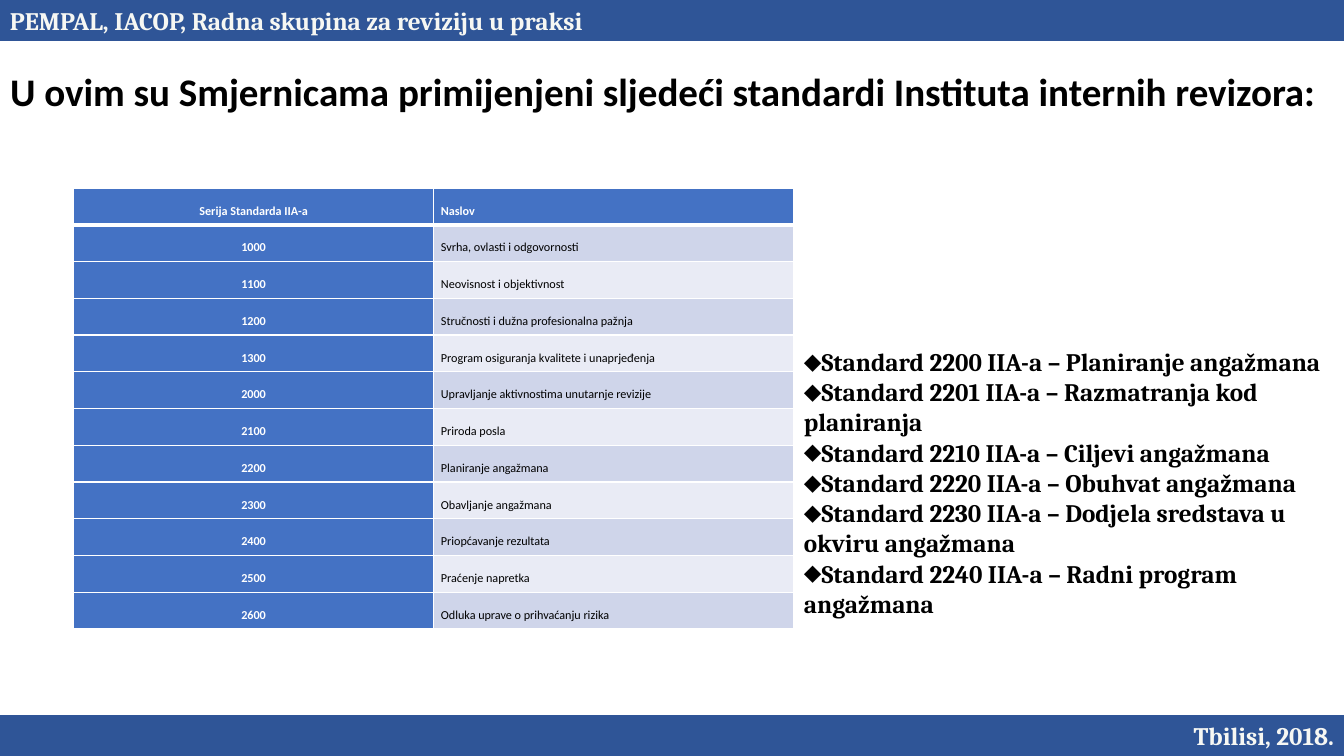
"""Builds the slide listing the IIA standards applied in the guidelines."""
from typing import NamedTuple

from lxml import etree
from pptx import Presentation
from pptx import util as u
from pptx.dml.color import RGBColor
from pptx.enum import shapes, text
from pptx.oxml import ns

EMU_PER_PX = 9525
WIDTH, HEIGHT, BAR_HEIGHT = 1280, 720, 39
ROW_HEIGHT, COLUMN_WIDTH = 35, 343

NAVY = RGBColor(0x2F, 0x55, 0x97)
BLUE = RGBColor(0x44, 0x72, 0xC4)
BAND_DARK = RGBColor(0xCF, 0xD5, 0xEA)
BAND_LIGHT = RGBColor(0xE9, 0xEB, 0xF5)
IVORY = RGBColor(0xF6, 0xF7, 0xF3)
WHITE = RGBColor(0xFF, 0xFF, 0xFF)
BLACK = RGBColor(0x00, 0x00, 0x00)

LEFT, CENTER = text.PP_ALIGN.LEFT, text.PP_ALIGN.CENTER


class Box(NamedTuple):
    left: int
    top: int
    width: int
    height: int


class Style(NamedTuple):
    font: str
    size: float
    color: RGBColor
    bold: bool = True


class Bar(NamedTuple):
    top: int
    label: str
    align: text.PP_ALIGN


class Standard(NamedTuple):
    series: str
    title: str


HEADING = "U ovim su Smjernicama primijenjeni sljedeći standardi Instituta internih revizora:"
BARS = [
    Bar(0, "PEMPAL, IACOP, Radna skupina za reviziju u praksi", LEFT),
    Bar(HEIGHT - BAR_HEIGHT, "Tbilisi, 2018.", text.PP_ALIGN.RIGHT),
]
STANDARDS = [
    Standard("Serija Standarda IIA-a", "Naslov"),
    Standard("1000", "Svrha, ovlasti i odgovornosti"),
    Standard("1100", "Neovisnost i objektivnost"),
    Standard("1200", "Stručnosti i dužna profesionalna pažnja"),
    Standard("1300", "Program osiguranja kvalitete i unaprjeđenja"),
    Standard("2000", "Upravljanje aktivnostima unutarnje revizije"),
    Standard("2100", "Priroda posla"),
    Standard("2200", "Planiranje angažmana"),
    Standard("2300", "Obavljanje angažmana"),
    Standard("2400", "Priopćavanje rezultata"),
    Standard("2500", "Praćenje napretka"),
    Standard("2600", "Odluka uprave o prihvaćanju rizika"),
]
ENGAGEMENT_STANDARDS = [
    "Standard 2200 IIA-a – Planiranje angažmana",
    "Standard 2201 IIA-a – Razmatranja kod planiranja",
    "Standard 2210 IIA-a – Ciljevi angažmana",
    "Standard 2220 IIA-a – Obuhvat angažmana",
    "Standard 2230 IIA-a – Dodjela sredstava u okviru angažmana",
    "Standard 2240 IIA-a – Radni program angažmana",
]


def px(length: int) -> u.Emu:
    return u.Emu(length * EMU_PER_PX)


def add_run(paragraph, content: str, style: Style, align: text.PP_ALIGN):
    paragraph.alignment = align
    run = paragraph.add_run()
    run.text = content
    run.font.name = style.font
    run.font.size = u.Pt(style.size)
    run.font.bold = style.bold
    run.font.color.rgb = style.color
    return run


def place(shape, box: Box):
    shape.left, shape.top, shape.width, shape.height = map(px, box)
    frame = shape.text_frame
    frame.word_wrap = True
    frame.auto_size = text.MSO_AUTO_SIZE.NONE
    frame.vertical_anchor = text.MSO_ANCHOR.TOP
    return frame


def add_heading(slide) -> None:
    paragraph = place(slide.shapes.title, Box(0, 72, WIDTH, 63)).paragraphs[0]
    paragraph.line_spacing = 0.7
    add_run(paragraph, HEADING, Style("Calibri", 27.9, BLACK), text.PP_ALIGN.JUSTIFY)


def add_bar(slide, bar: Bar) -> None:
    box = map(px, Box(0, bar.top, WIDTH, BAR_HEIGHT))
    shape = slide.shapes.add_shape(shapes.MSO_SHAPE.RECTANGLE, *box)
    shape.shadow.inherit = False
    shape.fill.solid()
    shape.fill.fore_color.rgb = NAVY
    shape.line.fill.background()
    shape.text_frame.word_wrap = True
    shape.text_frame.vertical_anchor = text.MSO_ANCHOR.MIDDLE
    add_run(shape.text_frame.paragraphs[0], bar.label, Style("Cambria", 18, IVORY), bar.align)


def add_engagement_list(slide) -> None:
    frame = place(slide.placeholders[1], Box(756, 325, 524, 323))
    for index, item in enumerate(ENGAGEMENT_STANDARDS):
        paragraph = frame.add_paragraph() if index else frame.paragraphs[0]
        properties = paragraph._p.get_or_add_pPr()
        properties.set("marL", "0")
        properties.set("indent", "0")
        etree.SubElement(properties, ns.qn("a:buChar")).set("char", "⬥")
        paragraph.space_before = u.Pt(0)
        add_run(paragraph, item, Style("Cambria", 18, BLACK), LEFT)


def add_border(cell, side: str, width: int) -> None:
    properties = cell._tc.get_or_add_tcPr()
    line = etree.SubElement(properties, ns.qn(f"a:ln{side}"), w=str(u.Pt(width)))
    fill = etree.SubElement(line, ns.qn("a:solidFill"))
    etree.SubElement(fill, ns.qn("a:srgbClr"), val=str(WHITE))


def format_cell(cell, content: str, row: int, column: int) -> None:
    is_label = row == 0 or column == 0
    cell.margin_left = cell.margin_right = px(7)
    cell.margin_top = cell.margin_bottom = 0
    widths = {"L": 1, "R": 1, "T": 3 if row == 1 else 1, "B": 3 if row == 0 else 1}
    for side, width in widths.items():
        add_border(cell, side, width)
    cell.fill.solid()
    cell.fill.fore_color.rgb = BLUE if is_label else BAND_DARK if row % 2 else BAND_LIGHT
    paragraph = cell.text_frame.paragraphs[0]
    paragraph.line_spacing = 1.07
    style = Style("Calibri", 15, WHITE if is_label else BLACK, is_label)
    run = add_run(paragraph, content, style, LEFT if column else CENTER)
    run._r.get_or_add_rPr().set("baseline", "-25000")


def add_standards_table(slide) -> None:
    box = Box(70, 179, 2 * COLUMN_WIDTH, len(STANDARDS) * ROW_HEIGHT)
    table = slide.shapes.add_table(len(STANDARDS), 2, *map(px, box)).table
    for row, standard in enumerate(STANDARDS):
        for column, content in enumerate(standard):
            format_cell(table.cell(row, column), content, row, column)


def main() -> None:
    presentation = Presentation()
    presentation.slide_width, presentation.slide_height = px(WIDTH), px(HEIGHT)
    slide = presentation.slides.add_slide(presentation.slide_layouts[1])
    add_heading(slide)
    for bar in BARS:
        add_bar(slide, bar)
    add_engagement_list(slide)
    add_standards_table(slide)
    presentation.save("out.pptx")


if __name__ == "__main__":
    main()
